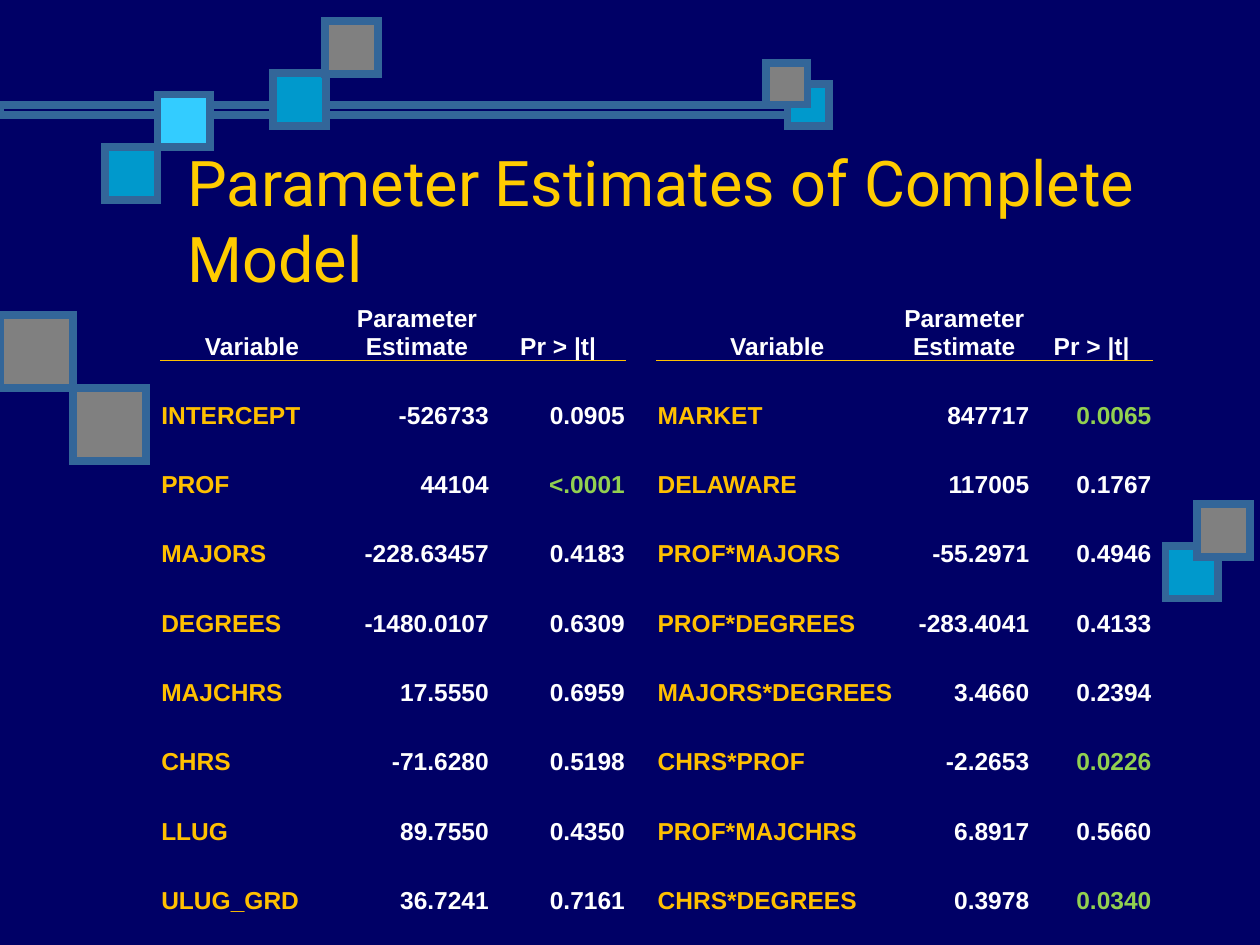
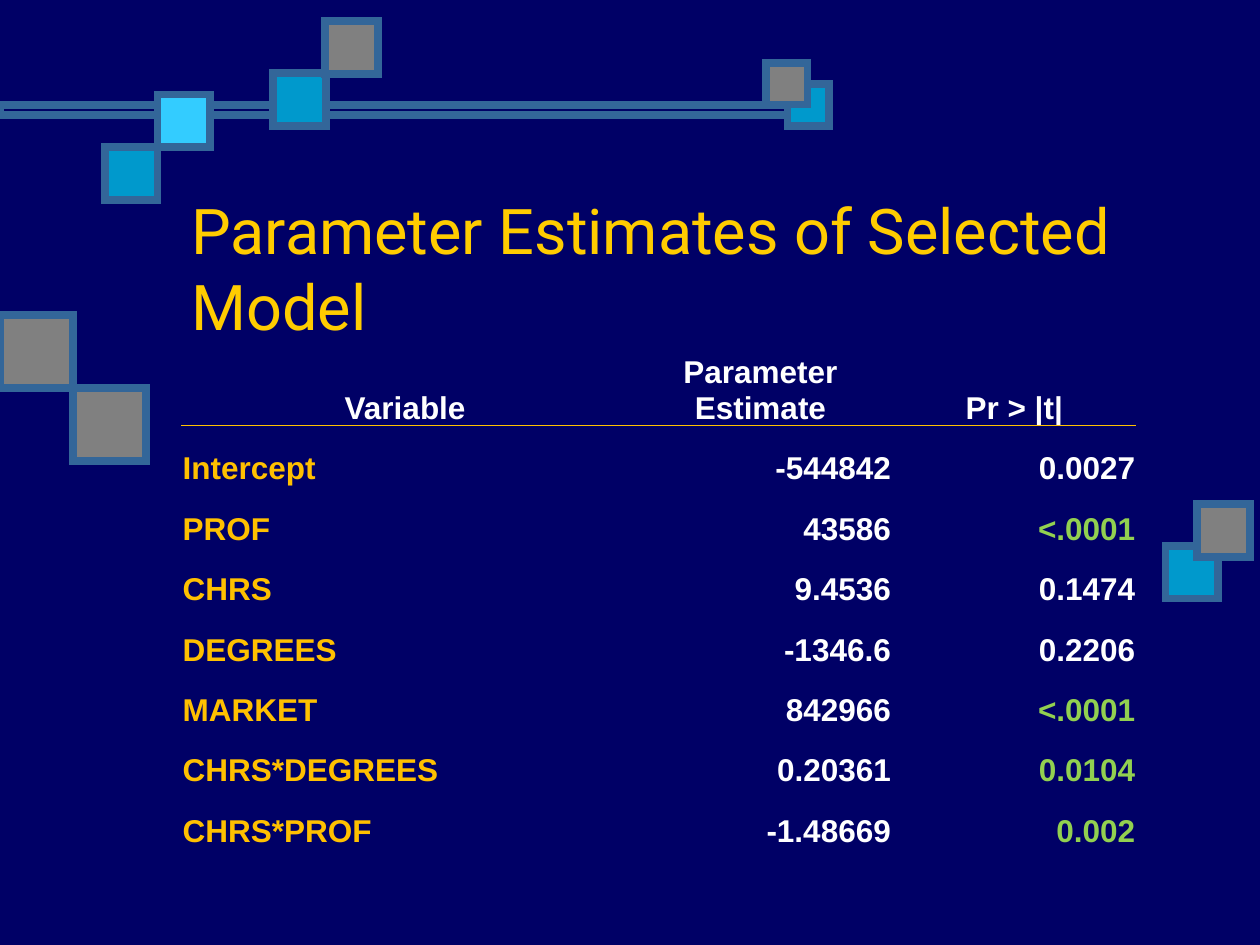
from typing import NamedTuple

import lxml.etree
import pptx
import pptx.dml.color
import pptx.enum.shapes
import pptx.enum.text
import pptx.oxml.ns
import pptx.slide
import pptx.table
import pptx.util

Inches = pptx.util.Inches
Pt = pptx.util.Pt
RGBColor = pptx.dml.color.RGBColor
PP_ALIGN = pptx.enum.text.PP_ALIGN
MSO_ANCHOR = pptx.enum.text.MSO_ANCHOR
qn = pptx.oxml.ns.qn

NAVY = RGBColor(0x00, 0x00, 0x66)
STEEL = RGBColor(0x33, 0x66, 0x99)
TEAL = RGBColor(0x00, 0x99, 0xCC)
SKY = RGBColor(0x33, 0xCC, 0xFF)
GRAY = RGBColor(0x80, 0x80, 0x80)
YELLOW = RGBColor(0xFF, 0xCC, 0x00)
AMBER = RGBColor(0xFF, 0xC0, 0x00)
GREEN = RGBColor(0x92, 0xD0, 0x50)
WHITE = RGBColor(0xFF, 0xFF, 0xFF)

TITLE_FONT = "Roboto"
TABLE_FONT = "Arial"
NO_GRID_STYLE = "{2D5ABB26-0587-4C30-8999-92F81FD0307C}"
SIGNIFICANCE = 0.05
HEADERS = ("Variable", "Parameter Estimate", "Pr > |t|")
HEADER_ROW = 0


class Box(NamedTuple):
    left: float
    top: float
    width: float
    height: float
    fill: RGBColor | None


class Estimate(NamedTuple):
    variable: str
    value: str
    p_value: str

    def is_significant(self) -> bool:
        return (self.variable.lower() != "intercept"
                and float(self.p_value.lstrip("<")) < SIGNIFICANCE)


class Panel(NamedTuple):
    widths: tuple[float, float, float]
    estimates: list[Estimate]


class EstimateSlide(NamedTuple):
    title: str
    title_at: tuple[float, float]
    table_at: tuple[float, float]
    header_height: float
    row_height: float
    font_size: int
    gap: float
    panels: list[Panel]


def square(left: float, top: float, side: float, fill: RGBColor) -> Box:
    return Box(left, top, side, side, fill)


DECORATION = [
    Box(0, 0.83, 6.42, 0.08, None),
    square(6.25, 0.67, 0.33, TEAL),
    square(6.08, 0.5, 0.33, GRAY),
    square(9.25, 4.33, 0.42, TEAL),
    square(9.5, 4, 0.42, GRAY),
    square(0, 2.5, 0.58, GRAY),
    square(0.58, 3.08, 0.58, GRAY),
    square(2.17, 0.58, 0.42, TEAL),
    square(0.83, 1.17, 0.42, TEAL),
    square(1.25, 0.75, 0.42, SKY),
    square(2.58, 0.17, 0.42, GRAY),
]

COMPLETE_LEFT = [
    Estimate("INTERCEPT", "-526733", "0.0905"),
    Estimate("PROF", "44104", "<.0001"),
    Estimate("MAJORS", "-228.63457", "0.4183"),
    Estimate("DEGREES", "-1480.0107", "0.6309"),
    Estimate("MAJCHRS", "17.5550", "0.6959"),
    Estimate("CHRS", "-71.6280", "0.5198"),
    Estimate("LLUG", "89.7550", "0.4350"),
    Estimate("ULUG_GRD", "36.7241", "0.7161"),
]
COMPLETE_RIGHT = [
    Estimate("MARKET", "847717", "0.0065"),
    Estimate("DELAWARE", "117005", "0.1767"),
    Estimate("PROF*MAJORS", "-55.2971", "0.4946"),
    Estimate("PROF*DEGREES", "-283.4041", "0.4133"),
    Estimate("MAJORS*DEGREES", "3.4660", "0.2394"),
    Estimate("CHRS*PROF", "-2.2653", "0.0226"),
    Estimate("PROF*MAJCHRS", "6.8917", "0.5660"),
    Estimate("CHRS*DEGREES", "0.3978", "0.0340"),
]
SELECTED = [
    Estimate("Intercept", "-544842", "0.0027"),
    Estimate("PROF", "43586", "<.0001"),
    Estimate("CHRS", "9.4536", "0.1474"),
    Estimate("DEGREES", "-1346.6", "0.2206"),
    Estimate("MARKET", "842966", "<.0001"),
    Estimate("CHRS*DEGREES", "0.20361", "0.0104"),
    Estimate("CHRS*PROF", "-1.48669", "0.002"),
]

SLIDES = [
    EstimateSlide("Parameter Estimates of Complete Model", (1.39, 0.95),
                  (1.27, 1.78), 1.08, 0.55, 14, 0.21,
                  [Panel((1.46, 1.16, 1.08), COMPLETE_LEFT),
                   Panel((1.92, 1.05, 0.97), COMPLETE_RIGHT)]),
    EstimateSlide("Parameter Estimates of Selected Model", (1.42, 1.33),
                  (1.44, 2.43), 0.95, 0.48, 18, 0,
                  [Panel((3.55, 2.09, 1.94), SELECTED)]),
]


def add_box(s: pptx.slide.Slide, box: Box) -> None:
    sp = s.shapes.add_shape(pptx.enum.shapes.MSO_SHAPE.RECTANGLE,
                            *(Inches(v) for v in box[:4]))
    sp.shadow.inherit = False
    if box.fill is None:
        sp.fill.background()
    else:
        sp.fill.solid()
        sp.fill.fore_color.rgb = box.fill
    sp.line.color.rgb = STEEL
    sp.line.width = Pt(4.5)
    ln = sp.element.spPr.find(qn("a:ln"))
    lxml.etree.SubElement(ln, qn("a:miter"), lim="800000")


def add_title(s: pptx.slide.Slide, text: str, at: tuple[float, float]) -> None:
    left, top = at
    sp = s.shapes.add_textbox(Inches(left), Inches(top),
                              Inches(7.75), Inches(1.58))
    tf = sp.text_frame
    tf.word_wrap = True
    tf.vertical_anchor = MSO_ANCHOR.MIDDLE
    p = tf.paragraphs[0]
    p.text = text
    p.font.name = TITLE_FONT
    p.font.size = Pt(36)
    p.font.color.rgb = YELLOW


def write_cell(cell: pptx.table._Cell, text: str, size: int,
               color: RGBColor, align: PP_ALIGN) -> None:
    cell.margin_left = cell.margin_right = cell.margin_top = Inches(0.01)
    cell.margin_bottom = 0
    cell.vertical_anchor = MSO_ANCHOR.BOTTOM
    p = cell.text_frame.paragraphs[0]
    p.text = text
    p.alignment = align
    p.font.name = TABLE_FONT
    p.font.size = Pt(size)
    p.font.bold = True
    p.font.color.rgb = color


def underline_cell(cell: pptx.table._Cell) -> None:
    tc_pr = cell._tc.get_or_add_tcPr()
    ln = lxml.etree.Element(qn("a:lnB"), w=str(Pt(0.5)))
    fill = lxml.etree.SubElement(ln, qn("a:solidFill"))
    lxml.etree.SubElement(fill, qn("a:srgbClr"), val=str(AMBER))
    tc_pr.insert(0, ln)


def fill_panel(table: pptx.table.Table, panel: Panel,
               first_col: int, size: int) -> None:
    for col, header in enumerate(HEADERS, first_col):
        cell = table.cell(HEADER_ROW, col)
        write_cell(cell, header, size, WHITE, PP_ALIGN.CENTER)
        underline_cell(cell)
    aligns = (PP_ALIGN.LEFT, PP_ALIGN.RIGHT, PP_ALIGN.RIGHT)
    for row, estimate in enumerate(panel.estimates, HEADER_ROW + 1):
        colors = (AMBER, WHITE, GREEN if estimate.is_significant() else WHITE)
        for col, (text, color, align) in enumerate(
                zip(estimate, colors, aligns), first_col):
            write_cell(table.cell(row, col), text, size, color, align)


def add_estimates(s: pptx.slide.Slide, content: EstimateSlide) -> None:
    widths: list[float] = []
    first_cols: list[int] = []
    for panel in content.panels:
        if widths:
            widths.append(content.gap)
        first_cols.append(len(widths))
        widths.extend(panel.widths)
    count = len(content.panels[0].estimates)
    heights = [content.header_height] + [content.row_height] * count
    left, top = content.table_at
    frame = s.shapes.add_table(len(heights), len(widths),
                               Inches(left), Inches(top),
                               Inches(sum(widths)), Inches(sum(heights)))
    table = frame.table
    table.first_row = table.horz_banding = False
    next(frame.element.iter(qn("a:tableStyleId"))).text = NO_GRID_STYLE
    for column, width in zip(table.columns, widths):
        column.width = Inches(width)
    for row, height in zip(table.rows, heights):
        row.height = Inches(height)
    for cell in table.iter_cells():
        cell.fill.background()
    for panel, first_col in zip(content.panels, first_cols):
        fill_panel(table, panel, first_col, content.font_size)


def add_slide(prs: pptx.presentation.Presentation,
              content: EstimateSlide) -> None:
    s = prs.slides.add_slide(prs.slide_layouts[6])
    s.background.fill.solid()
    s.background.fill.fore_color.rgb = NAVY
    for box in DECORATION:
        add_box(s, box)
    add_title(s, content.title, content.title_at)
    add_estimates(s, content)


def main() -> None:
    prs = pptx.Presentation()
    prs.slide_width = Inches(10)
    prs.slide_height = Inches(7.5)
    for content in SLIDES:
        add_slide(prs, content)
    prs.save("out.pptx")


if __name__ == "__main__":
    main()
